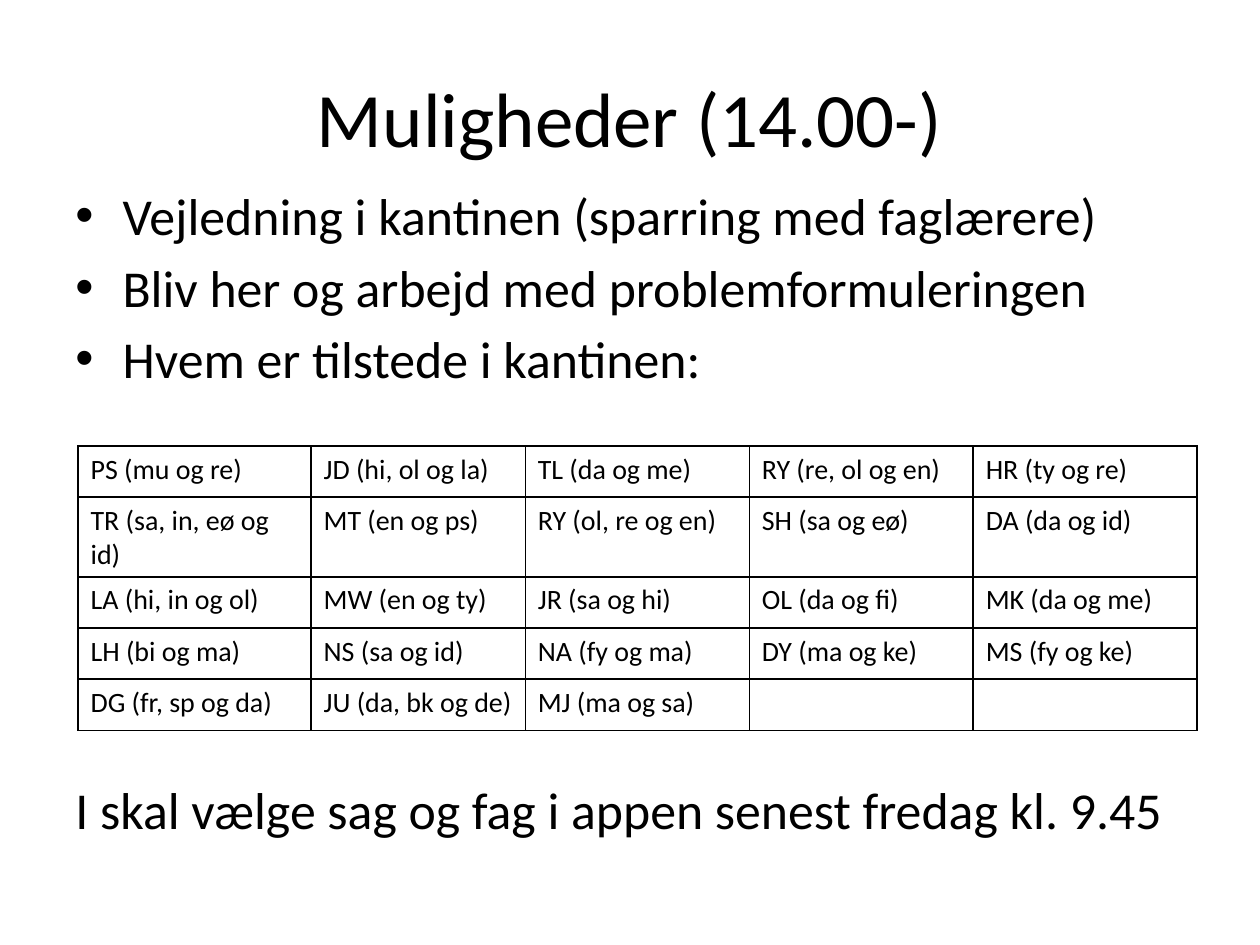
import pptx
import pptx.util
import pptx.dml.color
import pptx.enum.text
import pptx.oxml
import pptx.oxml.ns
from lxml import etree

Pt = pptx.util.Pt
BLACK = pptx.dml.color.RGBColor(0, 0, 0)
FONT = "Calibri"
BODY_SIZE = 29.6
INDENT = 27

TITLE = "Muligheder (14.00-)"
OPTIONS = [
    "Vejledning i kantinen (sparring med faglærere)",
    "Bliv her og arbejd med problemformuleringen",
    "Hvem er tilstede i kantinen:",
]
TEACHERS = [
    ["PS (mu og re)", "JD (hi, ol og la)", "TL (da og me)", "RY (re, ol og en)", "HR (ty og re)"],
    ["TR (sa, in, eø og id)", "MT (en og ps)", "RY (ol, re og en)", "SH (sa og eø)", "DA (da og id)"],
    ["LA (hi, in og ol)", "MW (en og ty)", "JR (sa og hi)", "OL (da og fi)", "MK (da og me)"],
    ["LH (bi og ma)", "NS (sa og id)", "NA (fy og ma)", "DY (ma og ke)", "MS (fy og ke)"],
    ["DG (fr, sp og da)", "JU (da, bk og de)", "MJ (ma og sa)", "", ""],
]
DEADLINE = "I skal vælge sag og fag i appen senest fredag kl. 9.45"
COLUMN_WIDTHS = [133.2, 122.4, 128, 128, 128]
ROW_HEIGHT = 29.2


def style(para, size):
    para.font.size = Pt(size)
    for span in para.runs:
        span.font.name = FONT
        span.font.size = Pt(size)
        span.font.color.rgb = BLACK


def add_text(page, top, height, lines, size):
    box = page.shapes.add_textbox(Pt(36), Pt(top), Pt(648), Pt(height))
    frame = box.text_frame
    frame.word_wrap = True
    frame.text = "\n".join(lines)
    for para in frame.paragraphs:
        style(para, size)
    return frame


def add_bullet(para):
    properties = para._p.get_or_add_pPr()
    properties.set("marL", str(Pt(INDENT)))
    properties.set("indent", str(-Pt(INDENT)))
    for tag, name, value in [("a:buFont", "typeface", "Arial"), ("a:buChar", "char", "•")]:
        etree.SubElement(properties, pptx.oxml.ns.qn(tag)).set(name, value)


def add_borders(cell):
    properties = cell._tc.get_or_add_tcPr()
    for position, side in enumerate(["lnL", "lnR", "lnT", "lnB"]):
        border = pptx.oxml.parse_xml(
            f'<a:{side} {pptx.oxml.ns.nsdecls("a")} w="{Pt(1)}"><a:solidFill>'
            f'<a:srgbClr val="{BLACK}"/></a:solidFill></a:{side}>'
        )
        properties.insert(position, border)


def add_teachers(page):
    frame = page.shapes.add_table(
        len(TEACHERS), len(COLUMN_WIDTHS), Pt(44.6), Pt(254.9),
        Pt(sum(COLUMN_WIDTHS)), Pt(ROW_HEIGHT * len(TEACHERS)),
    )
    table = frame.table
    table.first_row = False
    table.horz_banding = False
    for column, width in zip(table.columns, COLUMN_WIDTHS):
        column.width = Pt(width)
    for row, entries in zip(table.rows, TEACHERS):
        row.height = Pt(ROW_HEIGHT)
        for cell, entry in zip(row.cells, entries):
            cell.text = entry
            cell.fill.background()
            style(cell.text_frame.paragraphs[0], 16)
            add_borders(cell)


def main():
    deck = pptx.Presentation()
    deck.slide_width, deck.slide_height = Pt(720), Pt(540)
    page = deck.slides.add_slide(deck.slide_layouts[6])

    title = add_text(page, 21.6, 90, [TITLE], 44)
    title.vertical_anchor = pptx.enum.text.MSO_ANCHOR.MIDDLE
    title.paragraphs[0].alignment = pptx.enum.text.PP_ALIGN.CENTER

    options = add_text(page, 101.5, 130, OPTIONS, BODY_SIZE)
    for para in options.paragraphs:
        para.space_before = Pt(5.3)
        add_bullet(para)

    add_teachers(page)
    add_text(page, 441, 44, [DEADLINE], BODY_SIZE)
    deck.save("out.pptx")


if __name__ == "__main__":
    main()
